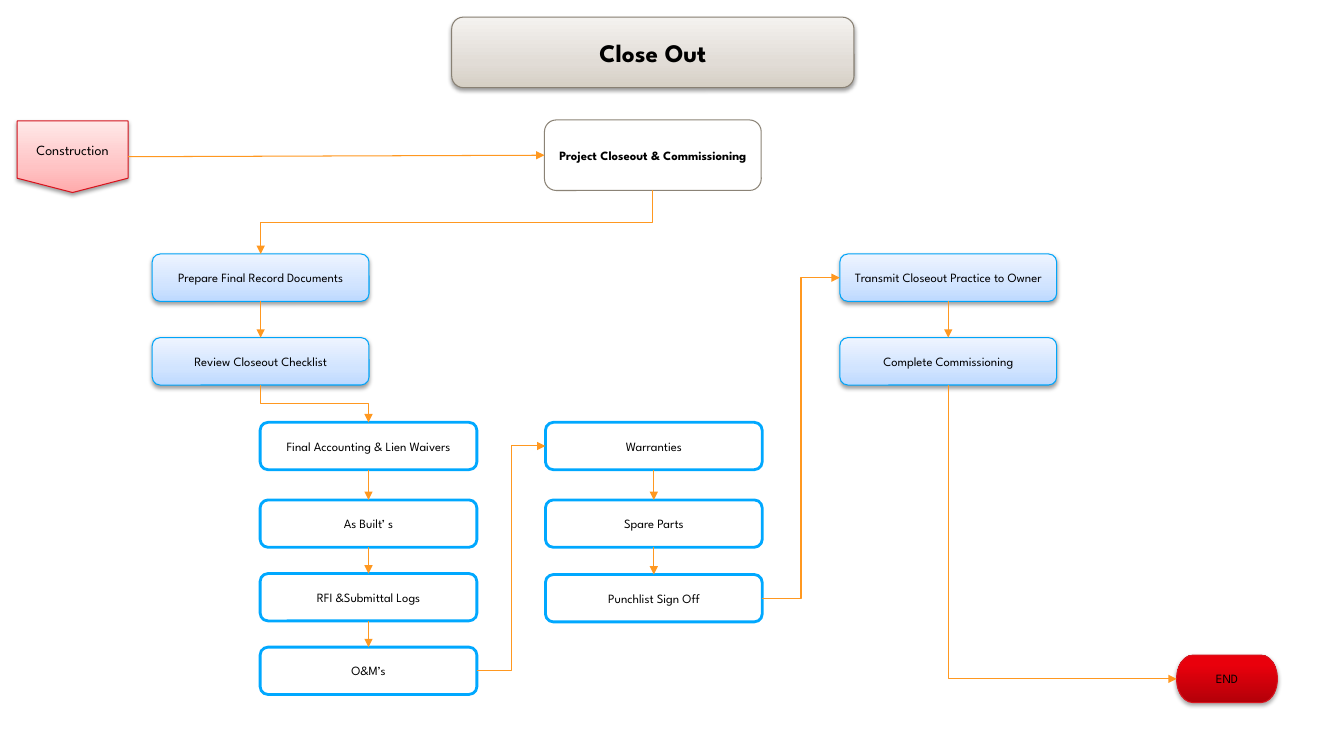
import pptx
import pptx.dml.color
import pptx.enum.shapes
import pptx.enum.text
import pptx.oxml
import pptx.oxml.ns
import pptx.util
from pptx.util import Inches

FONT = "League Spartan"
COLORS = {
    "text": "000000", "arrow": "FF9820", "white": "FFFFFF", "title_line": "888073",
    "phase_line": "8B8376", "task_line": "00A4F9", "item_line": "00A8FF", "red_line": "D7141E",
}
SAND = [(0, "D5CFC4"), (35, "E1DCD6"), (100, "F4F2EF")]
RED = [(0, "B30009"), (80, "E9000C"), (100, "EA000C")]
BLUE = [(0, "BDD9FF"), (35, "D1E4FF"), (100, "EEF4FF")]
PINK = [(0, "FFAAAB"), (35, "FFC3C4"), (100, "FFE8E8")]

SHAPES = pptx.enum.shapes.MSO_SHAPE
STYLES = {
    "title": dict(kind=SHAPES.ROUNDED_RECTANGLE, fill=SAND, line="title_line", size=18, bold=True),
    "phase": dict(kind=SHAPES.ROUNDED_RECTANGLE, fill=None, line="phase_line", bold=True),
    "task": dict(kind=SHAPES.ROUNDED_RECTANGLE, fill=BLUE, line="task_line"),
    "item": dict(kind=SHAPES.ROUNDED_RECTANGLE, fill="white", line="item_line", weight=2),
    "end": dict(kind=SHAPES.FLOWCHART_TERMINATOR, fill=RED, line="red_line", shadow=(35, 1.8)),
    "source": dict(kind=SHAPES.FLOWCHART_OFFPAGE_CONNECTOR, fill=PINK, line="red_line", size=10),
}

SINGLE_BOXES = [
    ("Close Out", "title", (4.48, 0.17, 3.99, 0.7)),
    ("Project Closeout & Commissioning", "phase", (5.4, 1.19, 2.15, 0.7)),
    ("Construction", "source", (0.17, 1.2, 1.1, 0.71)),
    ("END", "end", (11.67, 6.5, 1, 0.47)),
]
STEP_WIDTH, STEP_HEIGHT = 2.15, 0.47
STEP_COLUMNS = [
    ("task", 1.51, [("Prepare Final Record Documents", 2.52), ("Review Closeout Checklist", 3.35)]),
    ("item", 2.58, [("Final Accounting & Lien Waivers", 4.19), ("As Built’ s", 4.96),
                    ("RFI &Submittal Logs", 5.69), ("O&M’s", 6.42)]),
    ("item", 5.41, [("Warranties", 4.19), ("Spare Parts", 4.96), ("Punchlist Sign Off", 5.7)]),
    ("task", 8.33, [("Transmit Closeout Practice to Owner", 2.52), ("Complete Commissioning", 3.35)]),
]

TOP, LEFT, BOTTOM, RIGHT = range(4)
LINKS = [
    ("Construction", RIGHT, "Project Closeout & Commissioning", LEFT, "line"),
    ("Project Closeout & Commissioning", BOTTOM, "Prepare Final Record Documents", TOP, "bentConnector3"),
    ("Review Closeout Checklist", BOTTOM, "Final Accounting & Lien Waivers", TOP, "bentConnector3"),
    ("O&M’s", RIGHT, "Warranties", LEFT, "bentConnector3"),
    ("Punchlist Sign Off", RIGHT, "Transmit Closeout Practice to Owner", LEFT, "bentConnector3"),
    ("Complete Commissioning", BOTTOM, "END", LEFT, "bentConnector2"),
]


def rgb(name):
    return pptx.dml.color.RGBColor.from_string(COLORS[name])


def xml(tag, attributes, content=""):
    namespace = pptx.oxml.ns.nsdecls("a")
    return pptx.oxml.parse_xml(f"<a:{tag} {namespace} {attributes}>{content}</a:{tag}>")


def add_gradient(shape, stops):
    stop_list = "".join(
        f'<a:gs pos="{position * 1000}"><a:srgbClr val="{color}"/></a:gs>' for position, color in stops)
    gradient = xml("gradFill", 'rotWithShape="1"',
                   f'<a:gsLst>{stop_list}</a:gsLst><a:lin ang="16200000" scaled="0"/>')
    shape._element.spPr.find(pptx.oxml.ns.qn("a:prstGeom")).addnext(gradient)


def add_shadow(shape, opacity, distance):
    blur, offset = pptx.util.Pt(3.1), pptx.util.Pt(distance)
    effects = shape._element.spPr.find(pptx.oxml.ns.qn("a:effectLst"))
    effects.append(xml(
        "outerShdw", f'blurRad="{blur}" dist="{offset}" dir="5400000" rotWithShape="0"',
        f'<a:srgbClr val="000000"><a:alpha val="{opacity * 1000}"/></a:srgbClr>'))


def add_box(slide, text, style_name, box):
    style = STYLES[style_name]
    shape = slide.shapes.add_shape(style["kind"], *(Inches(value) for value in box))
    shape.shadow.inherit = False
    shape.line.color.rgb = rgb(style["line"])
    shape.line.width = pptx.util.Pt(style.get("weight", 0.75))
    fill = style["fill"]
    if fill is None:
        shape.fill.background()
    elif isinstance(fill, str):
        shape.fill.solid()
        shape.fill.fore_color.rgb = rgb(fill)
    else:
        add_gradient(shape, fill)
        add_shadow(shape, *style.get("shadow", (38, 1.6)))
    frame = shape.text_frame
    frame.word_wrap = True
    frame.margin_left = frame.margin_right = Inches(0.05)
    frame.vertical_anchor = pptx.enum.text.MSO_ANCHOR.MIDDLE
    frame.text = text
    paragraph = frame.paragraphs[0]
    paragraph.alignment = pptx.enum.text.PP_ALIGN.CENTER
    font = paragraph.runs[0].font
    font.name = FONT
    font.size = pptx.util.Pt(style.get("size", 9))
    font.bold = style.get("bold", False)
    font.color.rgb = rgb("text")
    return shape


def turn_downward(connector):
    across = connector.end_x - connector.begin_x
    down = connector.end_y - connector.begin_y
    center_x = (connector.begin_x + connector.end_x) // 2
    center_y = (connector.begin_y + connector.end_y) // 2
    connector.width, connector.height = down, abs(across)
    connector.left = center_x - down // 2
    connector.top = center_y - abs(across) // 2
    transform = connector._element.spPr.find(pptx.oxml.ns.qn("a:xfrm"))
    transform.set("rot", "16200000" if across > 0 else "5400000")
    transform.set("flipH", "1" if across > 0 else "0")
    transform.set("flipV", "0")


def add_link(slide, start, start_side, end, end_side, geometry):
    kinds = pptx.enum.shapes.MSO_CONNECTOR
    kind = kinds.STRAIGHT if geometry == "line" else kinds.ELBOW
    connector = slide.shapes.add_connector(kind, 0, 0, 0, 0)
    connector.begin_connect(start, start_side)
    connector.end_connect(end, end_side)
    properties = connector._element.spPr
    properties.find(pptx.oxml.ns.qn("a:prstGeom")).set("prst", geometry)
    if kind == kinds.ELBOW and start_side == BOTTOM:
        turn_downward(connector)
    connector.line.color.rgb = rgb("arrow")
    connector.line.width = pptx.util.Pt(0.75)
    properties.find(pptx.oxml.ns.qn("a:ln")).append(xml("tailEnd", 'type="triangle"'))
    properties.append(xml("effectLst", ""))


def main():
    """Build the project close out flowchart."""
    presentation = pptx.Presentation()
    presentation.slide_width, presentation.slide_height = Inches(13.33), Inches(7.5)
    slide = presentation.slides.add_slide(presentation.slide_layouts[6])
    boxes = {text: add_box(slide, text, style, box) for text, style, box in SINGLE_BOXES}
    links = list(LINKS)
    for style, left, steps in STEP_COLUMNS:
        for text, top in steps:
            boxes[text] = add_box(slide, text, style, (left, top, STEP_WIDTH, STEP_HEIGHT))
        for (upper, _), (lower, _) in zip(steps, steps[1:]):
            links.append((upper, BOTTOM, lower, TOP, "line"))
    for start, start_side, end, end_side, geometry in links:
        add_link(slide, boxes[start], start_side, boxes[end], end_side, geometry)
    presentation.save("out.pptx")


if __name__ == "__main__":
    main()
